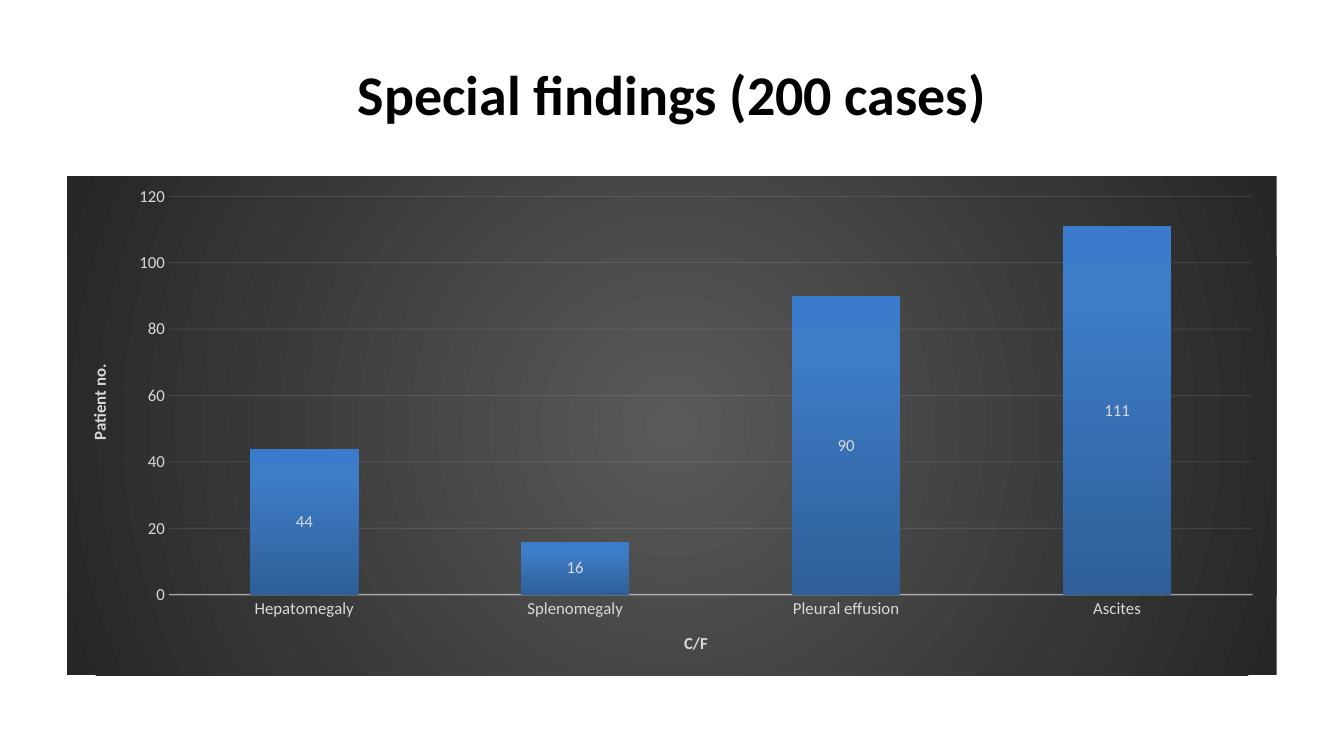
from lxml.etree import SubElement
from pptx import Presentation
from pptx.chart.data import CategoryChartData
from pptx.dml.color import RGBColor
from pptx.enum.chart import XL_CHART_TYPE, XL_LABEL_POSITION, XL_TICK_MARK
from pptx.enum.text import MSO_ANCHOR, PP_ALIGN
from pptx.oxml import parse_xml
from pptx.oxml.ns import nsdecls, qn
from pptx.util import Pt

FONT = "Calibri"
LABEL_COLOR = "D9D9D9"
LINE_COLOR = "F2F2F2"
FINDINGS = {"Hepatomegaly": 44, "Splenomegaly": 16, "Pleural effusion": 90, "Ascites": 111}


def color(value):
    return RGBColor.from_string(value)


def style_font(font, size, fill, bold=False):
    font.name = FONT
    font.size = Pt(size)
    font.bold = bold
    font.color.rgb = color(fill)


def write_text(frame, text, size=12, fill=LABEL_COLOR, bold=False, align=PP_ALIGN.CENTER):
    para = frame.paragraphs[0]
    para.alignment = align
    span = para.add_run()
    span.text = text
    style_font(span.font, size, fill, bold)


def gradient_properties(stops, direction):
    """Shape properties with a gradient fill and no outline."""
    marks = "".join(
        f'<a:gs pos="{percent * 1000}"><a:srgbClr val="{fill}"/></a:gs>' for percent, fill in stops
    )
    return parse_xml(
        f'<c:spPr {nsdecls("c", "a")}><a:gradFill rotWithShape="1"><a:gsLst>{marks}</a:gsLst>'
        f"{direction}</a:gradFill><a:ln><a:noFill/></a:ln></c:spPr>"
    )


def style_line(line, width, opacity):
    line.width = Pt(width)
    line.color.rgb = color(LINE_COLOR)
    tint = line.fill._xPr.find(qn("a:solidFill"))[0]
    SubElement(tint, qn("a:alpha")).set("val", str(opacity * 1000))


def style_axis(axis, title):
    axis.major_tick_mark = axis.minor_tick_mark = XL_TICK_MARK.NONE
    style_font(axis.tick_labels.font, 12, LABEL_COLOR)
    write_text(axis.axis_title.text_frame, title, bold=True)


def add_title(page, left, top, width, height):
    box = page.shapes.add_textbox(Pt(left), Pt(top), Pt(width), Pt(height))
    frame = box.text_frame
    frame.word_wrap = True
    frame.vertical_anchor = MSO_ANCHOR.MIDDLE
    write_text(frame, "Special findings (200 cases)", size=40, fill="000000", bold=True)


def add_findings_chart(page, left, top, width, height):
    data = CategoryChartData()
    data.categories = FINDINGS.keys()
    data.add_series("Series 1", FINDINGS.values())
    chart = page.shapes.add_chart(
        XL_CHART_TYPE.COLUMN_STACKED, Pt(left), Pt(top), Pt(width), Pt(height), data
    ).chart
    chart.has_legend = False
    chart.has_title = False
    style_font(chart.font, 10, "000000")

    # Dark radial background
    glow = '<a:path path="circle"><a:fillToRect l="50000" t="50000" r="50000" b="50000"/></a:path>'
    background = gradient_properties([(0, "595959"), (100, "262626")], glow)
    chart._chartSpace.find(qn("c:chart")).addnext(background)

    # Axes and gridlines
    style_axis(chart.category_axis, "C/F")
    style_line(chart.category_axis.format.line, 1, 54)
    values = chart.value_axis
    style_axis(values, "Patient no.")
    values.minimum_scale, values.maximum_scale, values.major_unit = 0, 120, 20
    values.format.line.fill.background()
    style_line(values.major_gridlines.format.line, 0.75, 10)

    # Columns shaded from bottom to top
    plot = chart.plots[0]
    plot.vary_by_categories = False
    plot.gap_width = 150
    plot.overlap = 100
    series = plot.series[0]
    series.invert_if_negative = False
    shading = gradient_properties(
        [(0, "2F5F99"), (80, "3D7CC7"), (100, "3A7CCB")], '<a:lin ang="16200000" scaled="0"/>'
    )
    plain = series._element.get_or_add_spPr()
    plain.getparent().replace(plain, shading)

    # Value labels
    labels = series.data_labels
    labels.show_value = True
    labels.position = XL_LABEL_POSITION.CENTER
    style_font(labels.font, 12, LABEL_COLOR)


def main():
    deck = Presentation()
    deck.slide_width, deck.slide_height = Pt(960), Pt(540)
    page = deck.slides.add_slide(deck.slide_layouts[6])
    add_title(page, 48, 21.6, 864, 90)
    add_findings_chart(page, 48, 126, 864, 356.4)
    deck.save("out.pptx")


if __name__ == "__main__":
    main()
